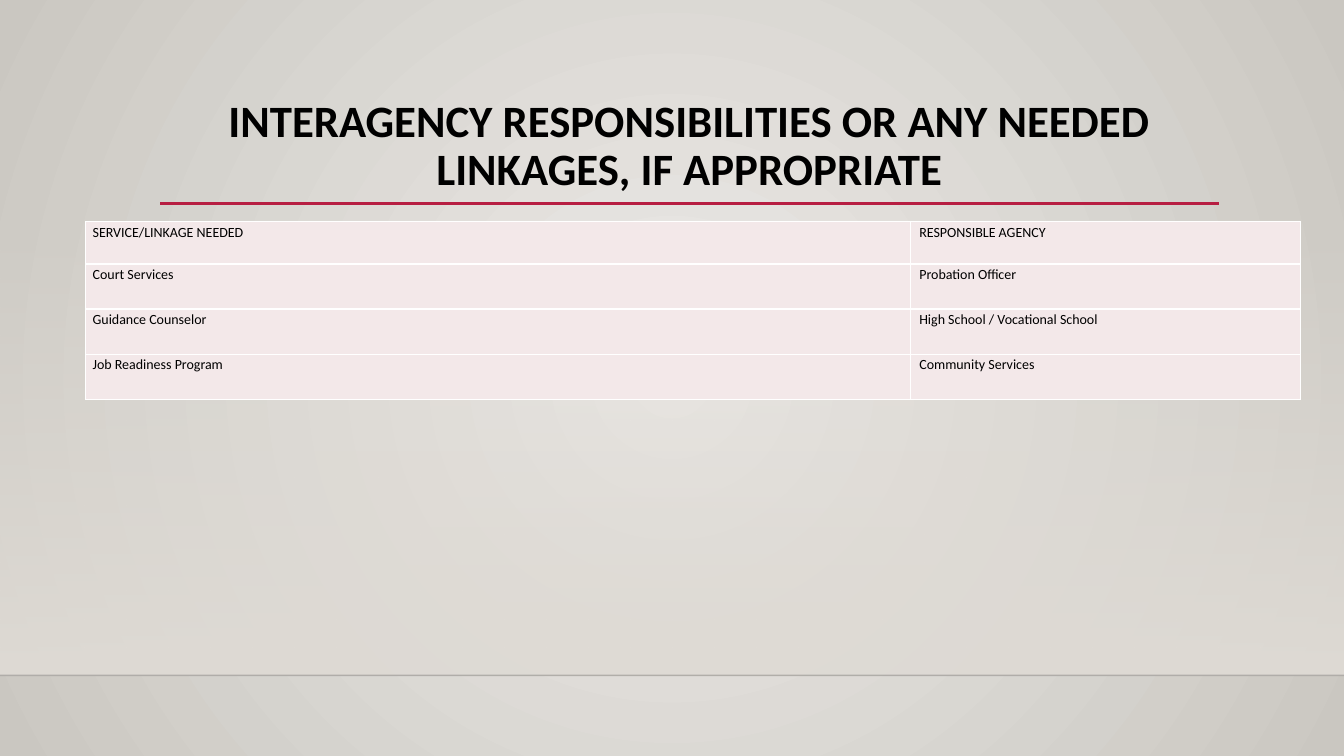
from lxml import etree
from pptx import Presentation
from pptx.dml.color import RGBColor
from pptx.enum import shapes, text
from pptx.oxml import parse_xml
from pptx.oxml.ns import qn
from pptx.util import Pt

# Content
TITLE = "INTERAGENCY RESPONSIBILITIES OR ANY NEEDED LINKAGES, IF APPROPRIATE"
LINKAGES = [
    ("SERVICE/LINKAGE NEEDED", "RESPONSIBLE AGENCY"),
    ("Court Services", "Probation Officer"),
    ("Guidance Counselor", "High School / Vocational School"),
    ("Job Readiness Program", "Community Services"),
]

# Look and layout, in points
COLORS = {
    "ink": "000000", "rule": "B71E42", "floor": "000001", "wall": "DFDBD5",
    "center": "ECEAE7", "edge": "CAC7C1", "cell": "F3E8E9", "border": "FFFFFF",
}
FONT = "Calibri"
SLIDE_W, SLIDE_H = 960, 540
WALL_TOP, FLOOR_Y = 159, 482.4
TITLE_BOX = (114.5, 63.4, 756, 82.8)
RULE_X, RULE_Y = (114.5, 871), 145.4
TABLE_X, TABLE_Y = 61.2, 158.4
COLUMN_WIDTHS, COLUMN_INDENTS = (589, 278.6), (5, 6.5)
HEADER_H, ROW_H = 30.2, 32.2
NS = 'xmlns:a="http://schemas.openxmlformats.org/drawingml/2006/main"'


def color(name):
    return RGBColor.from_string(COLORS[name])


def gradient(start, end, direction, start_alpha=100):
    return parse_xml(
        f'<a:gradFill {NS} rotWithShape="1"><a:gsLst>'
        f'<a:gs pos="0"><a:srgbClr val="{COLORS[start]}">'
        f'<a:alpha val="{start_alpha * 1000}"/></a:srgbClr></a:gs>'
        f'<a:gs pos="100000"><a:srgbClr val="{COLORS[end]}"/></a:gs>'
        f'</a:gsLst>{direction}</a:gradFill>')


def replace_fill(parent, new_fill):
    parent.replace(parent.find(qn("a:solidFill")), new_fill)


def add_rule(x1, x2, y, name, width):
    rule = slide.shapes.add_connector(
        shapes.MSO_CONNECTOR.STRAIGHT, Pt(x1), Pt(y), Pt(x2), Pt(y))
    rule.line.color.rgb = color(name)
    rule.line.width = Pt(width)
    etree.SubElement(rule._element.spPr, qn("a:effectLst"))
    return rule


def style_text(paragraph, size, spacing, bold=False):
    paragraph.line_spacing = spacing
    for run in paragraph.runs:
        run.font.name, run.font.size, run.font.bold = FONT, Pt(size), bold
        run.font.color.rgb = color("ink")


def add_borders(cell):
    properties = cell._tc.get_or_add_tcPr()
    for position, side in enumerate(("lnL", "lnR", "lnT", "lnB")):
        properties.insert(position, parse_xml(
            f'<a:{side} {NS} w="12700"><a:solidFill>'
            f'<a:srgbClr val="{COLORS["border"]}"/></a:solidFill></a:{side}>'))


prs = Presentation()
prs.slide_width, prs.slide_height = Pt(SLIDE_W), Pt(SLIDE_H)
slide = prs.slides.add_slide(prs.slide_layouts[6])

# Background: round glow
slide.background.fill.solid()
replace_fill(slide.background._cSld.bg.bgPr, gradient(
    "center", "edge",
    '<a:path path="circle"><a:fillToRect l="50000" t="50000" r="50000" b="50000"/></a:path>'))

# Wall fading in towards the floor line
wall = slide.shapes.add_shape(
    shapes.MSO_SHAPE.RECTANGLE, 0, Pt(WALL_TOP), Pt(SLIDE_W), Pt(FLOOR_Y - WALL_TOP))
wall.shadow.inherit = False
wall.line.fill.background()
wall.fill.solid()
replace_fill(wall._element.spPr, gradient(
    "wall", "wall", '<a:lin ang="5400000" scaled="0"/>', start_alpha=0))

floor = add_rule(0, SLIDE_W, FLOOR_Y, "floor", 1)
floor_color = floor._element.spPr.find(".//" + qn("a:srgbClr"))
etree.SubElement(floor_color, qn("a:alpha")).set("val", "20000")

# Title and its rule
add_rule(*RULE_X, RULE_Y, "rule", 2.5)
title = slide.shapes.add_textbox(*map(Pt, TITLE_BOX)).text_frame
title.word_wrap = True
title.vertical_anchor = text.MSO_ANCHOR.MIDDLE
title.text = TITLE
title.paragraphs[0].alignment = text.PP_ALIGN.CENTER
style_text(title.paragraphs[0], 32, 0.9, bold=True)

# Table of services and agencies
row_heights = [HEADER_H] + [ROW_H] * (len(LINKAGES) - 1)
table = slide.shapes.add_table(
    len(LINKAGES), len(COLUMN_WIDTHS), Pt(TABLE_X), Pt(TABLE_Y),
    Pt(sum(COLUMN_WIDTHS)), Pt(sum(row_heights))).table
for column, width in zip(table.columns, COLUMN_WIDTHS):
    column.width = Pt(width)
for r, (linkage, height) in enumerate(zip(LINKAGES, row_heights)):
    table.rows[r].height = Pt(height)
    for c, (entry, indent) in enumerate(zip(linkage, COLUMN_INDENTS)):
        cell = table.cell(r, c)
        cell.margin_left = cell.margin_right = cell.margin_top = cell.margin_bottom = 0
        cell.fill.solid()
        cell.fill.fore_color.rgb = color("cell")
        add_borders(cell)
        cell.text_frame.text = entry
        paragraph = cell.text_frame.paragraphs[0]
        paragraph._p.get_or_add_pPr().set("marL", str(Pt(indent)))
        style_text(paragraph, 10, 1.15)

prs.save("out.pptx")
